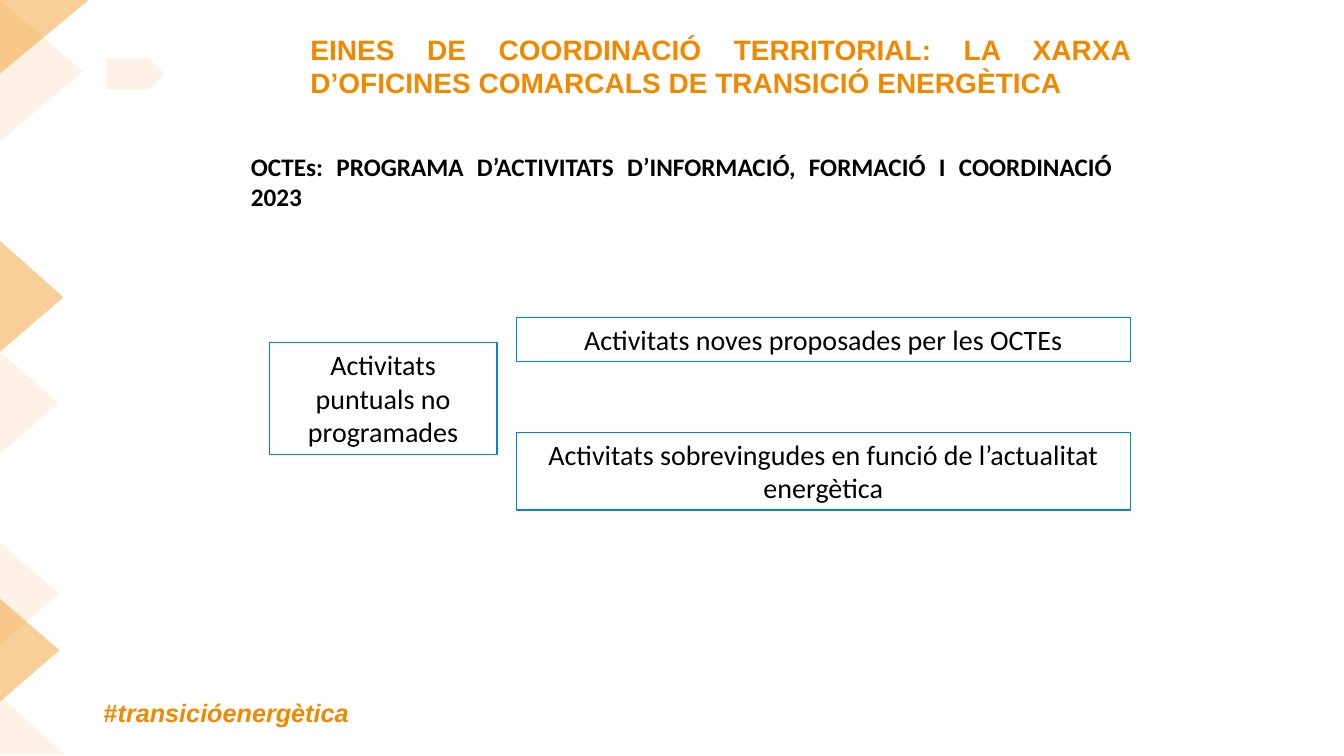
"""Build the slide on one-off activities of the county energy transition offices."""
import pptx
import pptx.util
from lxml import etree
from pptx.dml.color import RGBColor
from pptx.enum.shapes import MSO_SHAPE
from pptx.enum.text import MSO_ANCHOR, PP_ALIGN
from pptx.oxml.ns import qn

PX = 9144
ORANGE = RGBColor(0xF1, 0x89, 0x00)
BLUE = RGBColor(0x01, 0x89, 0xBF)
BLACK = RGBColor(0x00, 0x00, 0x00)


def tint(sp, alpha):
    sp.shadow.inherit = False
    sp.fill.solid()
    sp.fill.fore_color.rgb = ORANGE
    sp.line.fill.background()
    color = sp.fill._xPr.find(qn("a:solidFill"))[0]
    etree.SubElement(color, qn("a:alpha")).set("val", str(alpha * 1000))


def write(sp, runs, size, font, color, bold, align):
    tf = sp.text_frame
    tf.word_wrap = True
    tf.vertical_anchor = MSO_ANCHOR.TOP
    p = tf.paragraphs[0]
    p.alignment = align
    p.font.size = pptx.util.Pt(size)
    p.font.name = font
    p.font.bold = bold
    p.font.color.rgb = color
    for text in runs:
        p.add_run().text = text
    return p


prs = pptx.Presentation()
prs.slide_width = 1333 * PX
prs.slide_height = 750 * PX
s = prs.slides.add_slide(prs.slide_layouts[6])

hashtag = s.shapes.add_textbox(93 * PX, 687 * PX, 374 * PX, 40 * PX)
p = write(hashtag, ["#", "transicióenergètica"], 18, "Arial", ORANGE, True, PP_ALIGN.LEFT)
p.runs[1].font.italic = True

tag = s.shapes.add_shape(MSO_SHAPE.PENTAGON, 105 * PX, 58 * PX, 58 * PX, 31 * PX)
tint(tag, 10)

triangles = [
    ([(0, 696), (0, 594), (59, 645)], 40),
    ([(0, 450), (0, 349), (58, 400)], 10),
    ([(0, 349), (0, 239), (63, 295)], 40),
    ([(0, 140), (0, 0), (82, 71)], 10),
    ([(0, 73), (0, 0), (88, 0)], 40),
    ([(0, 640), (0, 538), (58, 589)], 10),
]
for points, alpha in triangles:
    builder = s.shapes.build_freeform(*points[0], scale=PX)
    builder.add_line_segments(points[1:], close=True)
    tint(builder.convert_to_shape(), alpha)

corner = s.shapes.add_shape(MSO_SHAPE.RIGHT_TRIANGLE, 0, 690 * PX, 63 * PX, 58 * PX)
tint(corner, 10)

boxes = [
    (267, 340, 226, 111, "Activitats puntuals no programades"),
    (512, 315, 609, 44, "Activitats noves proposades per les OCTEs"),
    (512, 429, 609, 77, "Activitats sobrevingudes en funció de l’actualitat energètica"),
]
for x, y, w, h, text in boxes:
    sp = s.shapes.add_shape(MSO_SHAPE.RECTANGLE, x * PX, y * PX, w * PX, h * PX)
    sp.shadow.inherit = False
    sp.fill.background()
    sp.line.color.rgb = BLUE
    sp.line.width = pptx.util.Pt(0.75)
    write(sp, [text], 20, "Calibri", BLACK, False, PP_ALIGN.CENTER)

headings = [
    (298, 27, 833, 64, 20, "Arial", ORANGE,
     "EINES DE COORDINACIÓ TERRITORIAL: LA XARXA D’OFICINES COMARCALS DE TRANSICIÓ ENERGÈTICA"),
    (239, 145, 874, 71, 18, "Calibri", BLACK,
     "OCTEs: PROGRAMA D’ACTIVITATS D’INFORMACIÓ, FORMACIÓ I COORDINACIÓ 2023"),
]
for x, y, w, h, size, font, color, text in headings:
    sp = s.shapes.add_textbox(x * PX, y * PX, w * PX, h * PX)
    write(sp, [text], size, font, color, True, PP_ALIGN.JUSTIFY)

prs.save("out.pptx")
